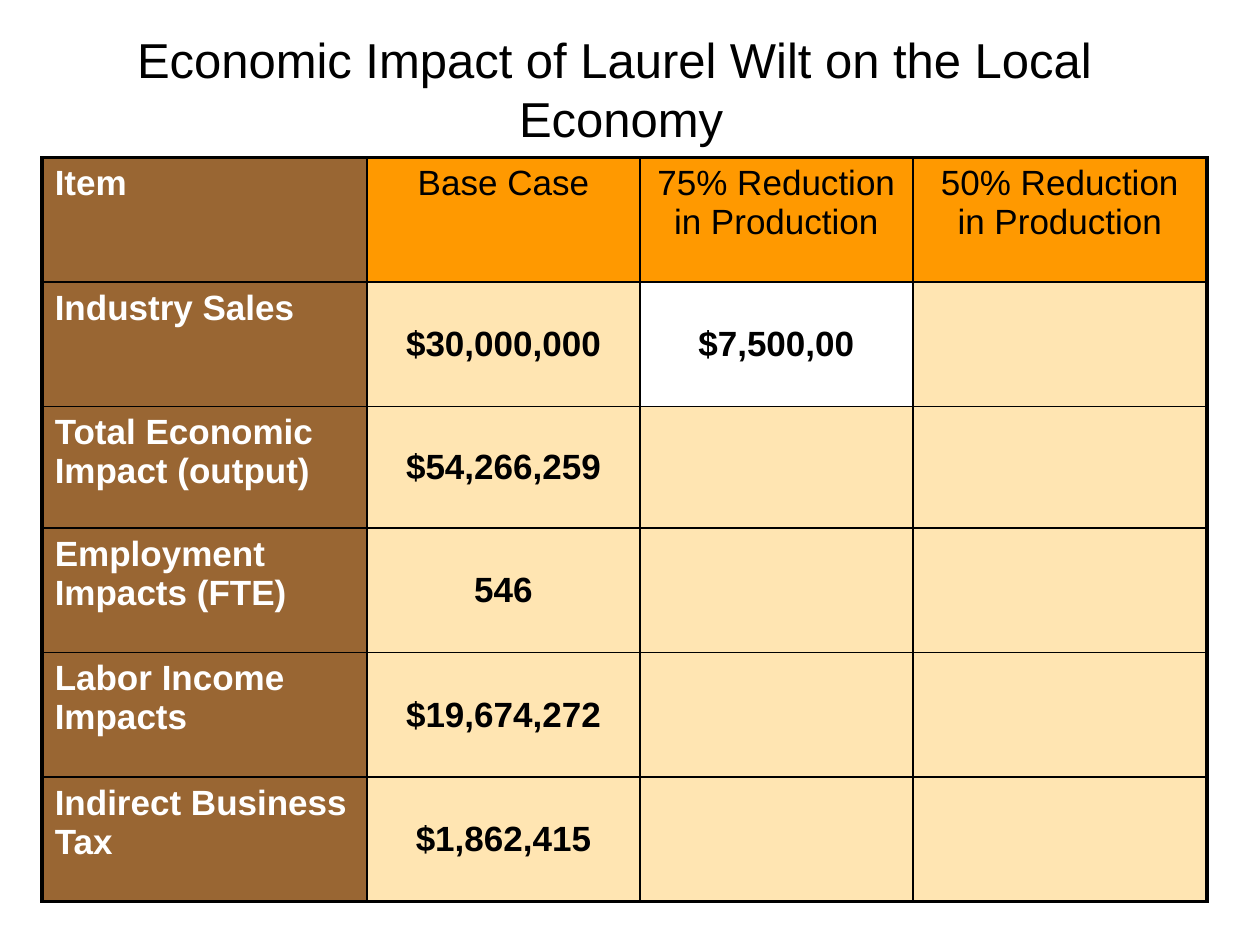
from lxml.etree import SubElement
from pptx import Presentation
from pptx.dml.color import RGBColor
from pptx.enum.text import MSO_ANCHOR, PP_ALIGN
from pptx.oxml import parse_xml
from pptx.oxml.ns import nsdecls, qn
from pptx.util import Cm, Pt

ROWS = [
    ["Item", "Base Case", "75% Reduction in Production", "50% Reduction in Production"],
    ["Industry Sales", "$30,000,000", "$7,500,00", ""],
    ["Total Economic Impact (output)", "$54,266,259", "", ""],
    ["Employment Impacts (FTE)", "546", "", ""],
    ["Labor Income Impacts", "$19,674,272", "", ""],
    ["Indirect Business Tax", "$1,862,415", "", ""],
]
WIDTHS = [6.55, 5.5, 5.5, 5.93]
HEIGHTS = [2.51, 2.51, 2.45, 2.51, 2.51, 2.51]


def color(text):
    return RGBColor.from_string(text)


class Deck:
    font = "Arial"
    black, white = "000000", "FFFFFF"
    brown, orange, sand = "996633", "FF9900", "FFCC66"
    thin, thick = 1, 2.25

    def __init__(self, show):
        self.slide = show.slides.add_slide(show.slide_layouts[6])

    def style(self, para, size, tint, bold=False, align=PP_ALIGN.CENTER):
        para.alignment = align
        font = para.font
        font.name, font.size, font.bold = self.font, Pt(size), bold
        font.color.rgb = color(tint)

    def title(self, text, left, top, width, height):
        frame = self.slide.shapes.add_textbox(
            Cm(left), Cm(top), Cm(width), Cm(height)).text_frame
        frame.word_wrap = True
        frame.vertical_anchor = MSO_ANCHOR.MIDDLE
        frame.text = text
        self.style(frame.paragraphs[0], 28, self.black)

    def border(self, cell, widths):
        props = cell._tc.get_or_add_tcPr()
        for spot, (side, width) in enumerate(zip("LRTB", widths)):
            props.insert(spot, parse_xml(
                f'<a:ln{side} {nsdecls("a")} w="{Pt(width)}"><a:solidFill>'
                f'<a:srgbClr val="{self.black}"/></a:solidFill></a:ln{side}>'))

    def paint(self, cell, tint, alpha=100):
        cell.fill.solid()
        cell.fill.fore_color.rgb = color(tint)
        if alpha < 100:
            node = cell._tc.tcPr.find(f".//{qn('a:srgbClr')}")
            SubElement(node, qn("a:alpha")).set("val", str(alpha * 1000))

    def cell(self, cell, text, row, col):
        cell.text = text
        para = cell.text_frame.paragraphs[0]
        if col == 0:
            self.style(para, 20, self.white, True, PP_ALIGN.LEFT)
            self.paint(cell, self.brown)
        elif row == 0:
            self.style(para, 20, self.black)
            self.paint(cell, self.orange)
        else:
            self.style(para, 20, self.black, True)
            cell.vertical_anchor = MSO_ANCHOR.MIDDLE
            tint = self.white if (row, col) == (1, 2) else self.sand
            self.paint(cell, tint, 50)

    def table(self, rows, left, top, widths, heights):
        deep, wide = len(rows), len(widths)
        grid = self.slide.shapes.add_table(
            deep, wide, Cm(left), Cm(top), Cm(sum(widths)), Cm(sum(heights))).table
        for column, width in zip(grid.columns, widths):
            column.width = Cm(width)
        for line, height in zip(grid.rows, heights):
            line.height = Cm(height)
        for row, texts in enumerate(rows):
            for col, text in enumerate(texts):
                cell = grid.cell(row, col)
                self.cell(cell, text, row, col)
                edges = (col == 0, col == wide - 1, row == 0, row == deep - 1)
                self.border(cell, [self.thick if edge else self.thin for edge in edges])


def main():
    show = Presentation()
    show.slide_width, show.slide_height = Cm(25.4), Cm(19.05)
    deck = Deck(show)
    deck.title("Economic Impact of Laurel Wilt on the Local\v Economy", 0, 0.2, 24.77, 3.18)
    deck.table(ROWS, 0.85, 3.18, WIDTHS, HEIGHTS)
    show.save("out.pptx")


if __name__ == "__main__":
    main()
